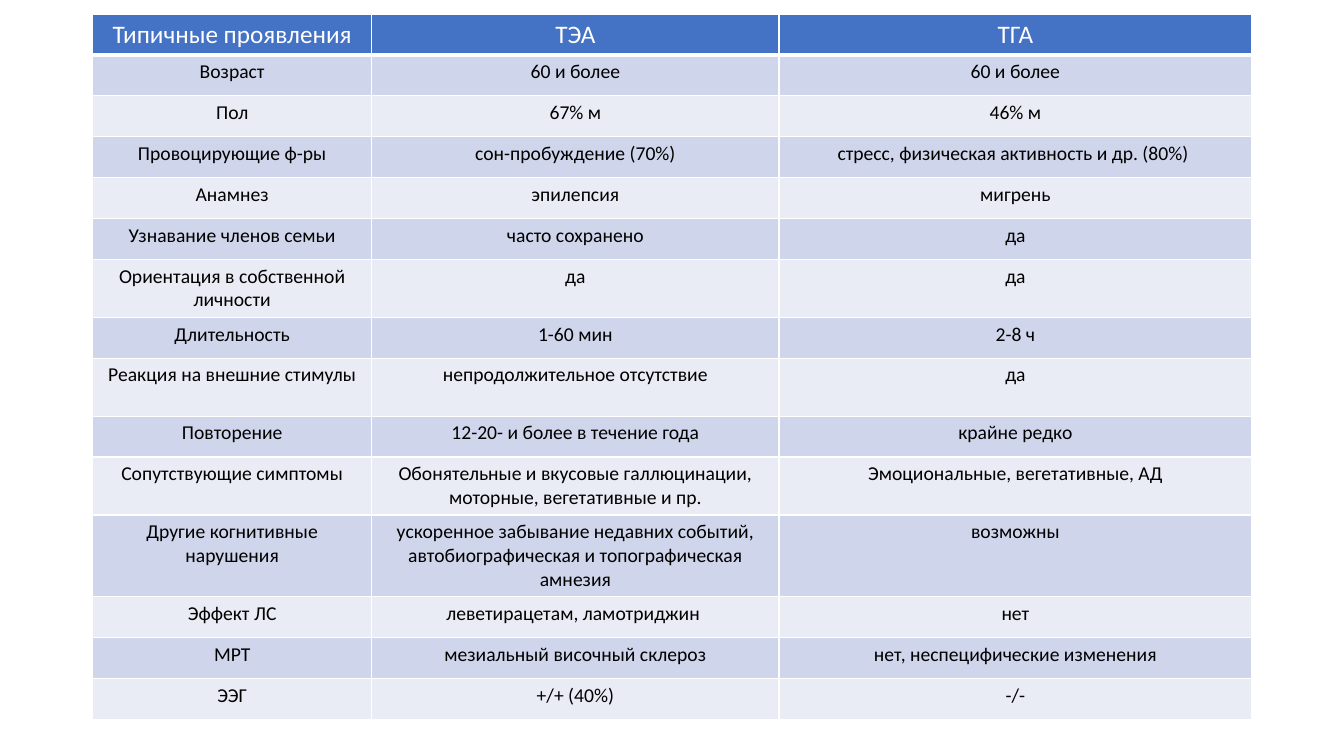
from dataclasses import dataclass
from typing import NamedTuple

from lxml.etree import SubElement as Sub
from pptx import Presentation as Deck
from pptx.dml.color import RGBColor as Color
from pptx.enum.text import PP_ALIGN as Align
from pptx.oxml.ns import qn
from pptx.table import _Cell as Cell
from pptx.util import Pt


@dataclass(frozen=True)
class Theme:
    """Colours, type sizes and line widths."""
    font: str = "Calibri"
    head: str = "4472C4"
    bands: tuple[str, str] = ("CFD5EA", "E9EBF5")
    white: str = "FFFFFF"
    black: str = "000000"
    big: float = 18
    small: float = 14
    thin: float = 1
    thick: float = 3


class Row(NamedTuple):
    """One feature compared across both kinds of amnesia."""
    trait: str
    tea: str
    tga: str
    lines: int = 1


class Look(NamedTuple):
    """How the cells of one row are drawn."""
    fill: str
    ink: str
    size: float
    top: float
    base: float


THEME = Theme()
WIDTHS = (199.4, 290.9, 337.7)
HEIGHTS = {1: 29.2, 2: 41.4, 3: 58.2}
ROWS = (
    Row("Типичные проявления", "ТЭА", "ТГА"),
    Row("Возраст", "60 и более", "60 и более"),
    Row("Пол", "67% м", "46% м"),
    Row("Провоцирующие ф-ры", "сон-пробуждение (70%)",
        "стресс, физическая активность и др. (80%) "),
    Row("Анамнез", "эпилепсия", "мигрень"),
    Row("Узнавание членов семьи", "часто сохранено", "да"),
    Row("Ориентация в собственной личности", "да", "да", 2),
    Row("Длительность", "1-60 мин", "2-8 ч"),
    Row("Реакция на внешние стимулы", "непродолжительное отсутствие", "да", 2),
    Row("Повторение", "12-20- и более в течение года", "крайне редко"),
    Row("Сопутствующие симптомы",
        "Обонятельные и вкусовые галлюцинации, моторные, вегетативные и пр.",
        "Эмоциональные, вегетативные, АД", 2),
    Row("Другие когнитивные нарушения",
        "ускоренное забывание недавних событий, "
        "автобиографическая и топографическая амнезия", "возможны", 3),
    Row("Эффект ЛС", "леветирацетам, ламотриджин ", "нет"),
    Row("МРТ", "мезиальный височный склероз", "нет, неспецифические изменения"),
    Row("ЭЭГ", "+/+ (40%)", "-/-"),
)


def style(index: int) -> Look:
    """Return the look of the row at this index."""
    if index == 0:
        return Look(THEME.head, THEME.white, THEME.big, THEME.thin, THEME.thick)
    top = THEME.thick if index == 1 else THEME.thin
    return Look(THEME.bands[(index - 1) % 2], THEME.black, THEME.small, top, THEME.thin)


def edge(cell: Cell, look: Look) -> None:
    """Draw the four white borders of a cell."""
    props = cell._tc.get_or_add_tcPr()
    sides = {"L": THEME.thin, "R": THEME.thin, "T": look.top, "B": look.base}
    for side, width in sides.items():
        line = Sub(props, qn(f"a:ln{side}"), w=str(Pt(width)))
        paint = Sub(line, qn("a:solidFill"))
        Sub(paint, qn("a:srgbClr"), val=THEME.white)


def draw(cell: Cell, text: str, look: Look) -> None:
    """Fill a cell and set its centred text."""
    edge(cell, look)
    cell.fill.solid()
    cell.fill.fore_color.rgb = Color.from_string(look.fill)
    cell.text_frame.text = text
    para = cell.text_frame.paragraphs[0]
    para.alignment = Align.CENTER
    font = para.runs[0].font
    font.name, font.size, font.bold = THEME.font, Pt(look.size), False
    font.color.rgb = Color.from_string(look.ink)


def main() -> None:
    """Build the slide and save it."""
    deck = Deck()
    deck.slide_width, deck.slide_height = Pt(960), Pt(540)
    slide = deck.slides.add_slide(deck.slide_layouts[6])
    tall = sum(HEIGHTS[row.lines] for row in ROWS)
    table = slide.shapes.add_table(
        len(ROWS), len(WIDTHS), Pt(66.2), Pt(10.1), Pt(sum(WIDTHS)), Pt(tall)).table
    for col, width in zip(table.columns, WIDTHS):
        col.width = Pt(width)
    for index, row in enumerate(ROWS):
        table.rows[index].height = Pt(HEIGHTS[row.lines])
        for place, text in enumerate((row.trait, row.tea, row.tga)):
            draw(table.cell(index, place), text, style(index))
    deck.save("out.pptx")


if __name__ == "__main__":
    main()
